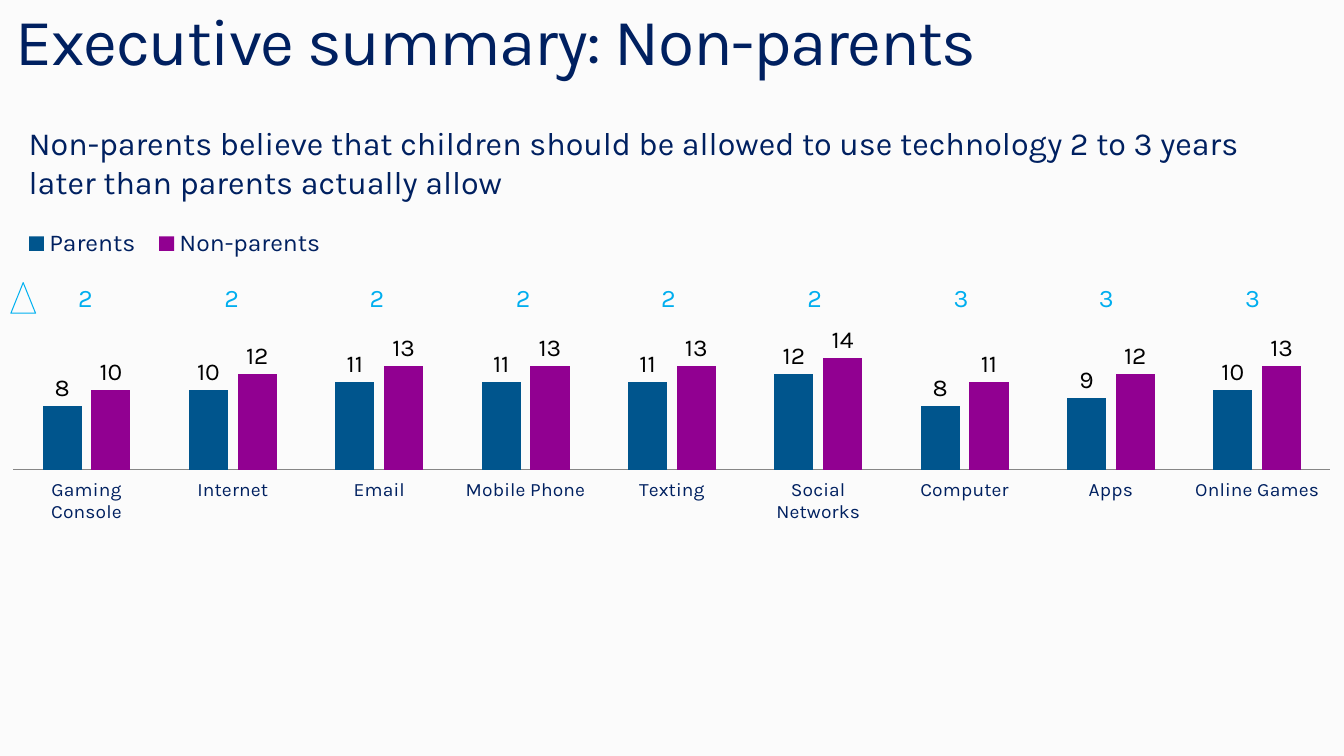
from dataclasses import dataclass

from pptx import Presentation
from pptx.chart.data import CategoryChartData
from pptx.dml.color import RGBColor
from pptx.enum.chart import XL_CHART_TYPE as ChartType
from pptx.enum.chart import XL_LABEL_POSITION as LabelPosition
from pptx.enum.chart import XL_LEGEND_POSITION as LegendPosition
from pptx.enum.chart import XL_TICK_LABEL_POSITION as TickLabelPosition
from pptx.enum.chart import XL_TICK_MARK as TickMark
from pptx.enum.shapes import MSO_SHAPE as ShapeType
from pptx.oxml import parse_xml
from pptx.oxml.ns import nsdecls, qn
from pptx.util import Emu, Pt


@dataclass(frozen=True)
class Theme:
    font: str = "Karla"
    background: str = "FBFBFB"
    navy: str = "002060"
    black: str = "000000"
    axis: str = "868686"
    difference: str = "00AEEF"
    triangle: str = "00B0F0"
    parents: str = "00558D"
    non_parents: str = "910091"
    title_size: float = 48
    message_size: float = 23.5
    difference_size: float = 18.4
    chart_size: float = 18
    category_size: float = 14


THEME = Theme()
EMU_PER_PX = 9144
CATEGORIES = ["Gaming Console", "Internet", "Email", "Mobile Phone", "Texting",
              "Social Networks", "Computer", "Apps", "Online Games"]
AGES = [
    ("Parents", [8, 10, 11, 11, 11, 12, 8, 9, 10], THEME.parents),
    ("Non-parents", [10, 12, 13, 13, 13, 14, 11, 12, 13], THEME.non_parents),
]
FIRST_DIFFERENCE_LEFT = 79
LAST_DIFFERENCE_LEFT = 1260


def px(length):
    return Emu(length * EMU_PER_PX)


def rgb(color):
    return RGBColor.from_string(color)


def style_font(font, size, color):
    font.name = THEME.font
    font.size = Pt(size)
    font.color.rgb = rgb(color)


def add_text(slide, box, text, size, color, line_spacing=1.0, tracking=0):
    shape = slide.shapes.add_textbox(*map(px, box))
    frame = shape.text_frame
    frame.word_wrap = True
    frame.margin_left = frame.margin_top = frame.margin_right = frame.margin_bottom = 0
    frame.text = text
    paragraph = frame.paragraphs[0]
    paragraph.line_spacing = line_spacing
    for run in paragraph.runs:
        style_font(run.font, size, color)
        if tracking:
            run._r.get_or_add_rPr().set("spc", str(tracking))


def add_triangle(slide, box):
    shape = slide.shapes.add_shape(ShapeType.FLOWCHART_EXTRACT, *map(px, box))
    shape.shadow.inherit = False
    shape.fill.background()
    shape.line.color.rgb = rgb(THEME.triangle)
    shape.line.width = Pt(0.75)


def set_layout(element, index, fractions, target=""):
    previous = element.find(qn("c:layout"))
    if previous is not None:
        element.remove(previous)
    settings = target + '<c:xMode val="edge"/><c:yMode val="edge"/>'
    settings += "".join(f'<c:{name} val="{value}"/>' for name, value in zip("xywh", fractions))
    element.insert(index, parse_xml(
        f'<c:layout {nsdecls("c")}><c:manualLayout>{settings}</c:manualLayout></c:layout>'))


def style_axes(chart):
    category_axis = chart.category_axis
    category_axis.major_tick_mark = TickMark.NONE
    category_axis.minor_tick_mark = TickMark.NONE
    category_axis.tick_label_position = TickLabelPosition.LOW
    category_axis.format.line.color.rgb = rgb(THEME.axis)
    category_axis.format.line.width = Pt(0.75)
    style_font(category_axis.tick_labels.font, THEME.category_size, THEME.navy)
    value_axis = chart.value_axis
    value_axis.minimum_scale = 0
    value_axis.maximum_scale = 16
    value_axis.has_major_gridlines = False
    value_axis.visible = False


def style_legend(chart):
    chart.has_legend = True
    legend = chart.legend
    legend.position = LegendPosition.TOP
    legend.include_in_layout = False
    style_font(legend.font, THEME.chart_size, THEME.navy)
    set_layout(legend._element, 1, (0.01, 0.01, 0.24, 0.13))


def add_age_chart(slide, box):
    data = CategoryChartData()
    data.categories = CATEGORIES
    for name, values, _ in AGES:
        data.add_series(name, values)
    chart = slide.shapes.add_chart(ChartType.COLUMN_CLUSTERED, *map(px, box), data).chart
    chart.has_title = False
    style_font(chart.font, THEME.chart_size, THEME.black)
    style_axes(chart)
    style_legend(chart)
    set_layout(chart._chartSpace.chart.plotArea, 0, (0.01, 0.41, 0.98, 0.43),
               '<c:layoutTarget val="inner"/>')
    plot = chart.plots[0]
    plot.vary_by_categories = False
    plot.gap_width = 150
    plot.overlap = -25
    plot.has_data_labels = True
    labels = plot.data_labels
    labels.show_value = True
    labels.position = LabelPosition.OUTSIDE_END
    style_font(labels.font, THEME.chart_size, THEME.black)
    for series, (_, _, color) in zip(plot.series, AGES):
        series.invert_if_negative = False
        series.format.fill.solid()
        series.format.fill.fore_color.rgb = rgb(color)


def add_differences(slide):
    (_, parents, _), (_, non_parents, _) = AGES
    span = LAST_DIFFERENCE_LEFT - FIRST_DIFFERENCE_LEFT
    for index, (parent, non_parent) in enumerate(zip(parents, non_parents)):
        left = FIRST_DIFFERENCE_LEFT + round(span * index / (len(CATEGORIES) - 1))
        add_text(slide, (left, 286, 23, 32), str(non_parent - parent),
                 THEME.difference_size, THEME.difference)


def main():
    presentation = Presentation()
    presentation.slide_width = px(1360)
    presentation.slide_height = px(765)
    slide = presentation.slides.add_slide(presentation.slide_layouts[6])
    slide.background.fill.solid()
    slide.background.fill.fore_color.rgb = rgb(THEME.background)
    add_age_chart(slide, (0, 224, 1360, 306))
    add_text(slide, (29, 125, 1299, 83),
             "Non-parents believe that children should be allowed to use technology "
             "2 to 3 years later than parents actually allow",
             THEME.message_size, THEME.navy)
    add_differences(slide)
    add_triangle(slide, (11, 286, 25, 31))
    add_text(slide, (16, 9, 1299, 73), "Executive summary: Non-parents",
             THEME.title_size, THEME.navy, line_spacing=0.9, tracking=-100)
    presentation.save("out.pptx")


if __name__ == "__main__":
    main()
